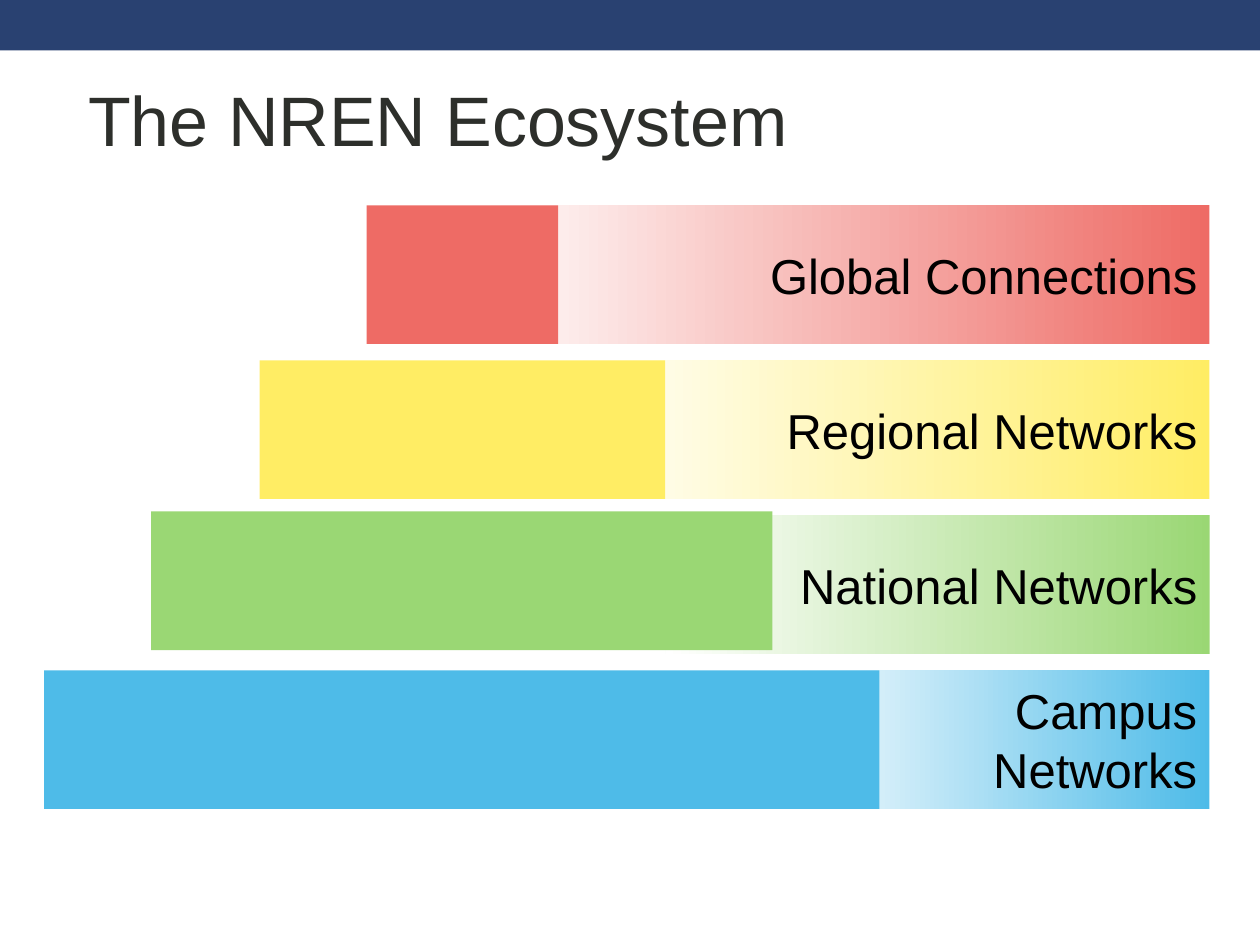
from dataclasses import dataclass

from pptx import Presentation
from pptx.dml.color import RGBColor
from pptx.enum.shapes import MSO_SHAPE as Shape
from pptx.enum.text import MSO_ANCHOR as Anchor, PP_ALIGN as Align
from pptx.util import Inches, Pt

NAVY = RGBColor(0x29, 0x41, 0x71)
CHARCOAL = RGBColor(0x2D, 0x2F, 0x2B)
BLACK = RGBColor(0x00, 0x00, 0x00)
WHITE = RGBColor(0xFF, 0xFF, 0xFF)
RED = RGBColor(0xEE, 0x6B, 0x65)
YELLOW = RGBColor(0xFF, 0xED, 0x64)
GREEN = RGBColor(0x9A, 0xD7, 0x74)
BLUE = RGBColor(0x4E, 0xBB, 0xE8)

TIER_TOP, TIER_PITCH, TIER_HEIGHT = 1.63, 1.23, 1.1
TIER_RIGHT = 9.6


@dataclass
class Tier:
    lines: tuple[str, ...]
    color: RGBColor
    block_left: float
    block_width: float
    label_left: float
    block_shift: float = 0


TIERS = [
    Tier(("Global Connections",), RED, 2.91, 1.52, 3.67),
    Tier(("Regional Networks",), YELLOW, 2.06, 3.22, 4.43),
    Tier(("National Networks",), GREEN, 1.2, 4.93, 5.28, -0.03),
    Tier(("Campus", "Networks"), BLUE, 0.35, 6.63, 6.13),
]


def add_rect(s, left: float, top: float, width: float, height: float):
    sp = s.shapes.add_shape(Shape.RECTANGLE, Inches(left), Inches(top),
                            Inches(width), Inches(height))
    sp.shadow.inherit = False
    sp.line.fill.background()
    return sp


def add_block(s, left: float, top: float, width: float, height: float,
              color: RGBColor) -> None:
    sp = add_rect(s, left, top, width, height)
    sp.fill.solid()
    sp.fill.fore_color.rgb = color


def write_lines(tf, lines: tuple[str, ...], size: float, color: RGBColor,
                align: Align) -> None:
    tf.word_wrap = True
    tf.vertical_anchor = Anchor.MIDDLE
    for i, line in enumerate(lines):
        p = tf.add_paragraph() if i else tf.paragraphs[0]
        p.alignment = align
        r = p.add_run()
        r.text = line
        for name, value in {"name": "Arial", "size": Pt(size)}.items():
            setattr(r.font, name, value)
        r.font.color.rgb = color


def add_label(s, tier: Tier, top: float) -> None:
    sp = add_rect(s, tier.label_left, top, TIER_RIGHT - tier.label_left, TIER_HEIGHT)
    sp.fill.gradient()
    sp.fill.gradient_angle = 180
    for stop, position, color in zip(sp.fill.gradient_stops, (0, 1), (tier.color, WHITE)):
        stop.position = position
        stop.color.rgb = color
    write_lines(sp.text_frame, tier.lines, 28, BLACK, Align.RIGHT)


def add_title(s, text: str) -> None:
    title = s.shapes.title
    place = {"left": 0.6, "top": 0.4, "width": 9, "height": 1.08}
    for name, value in place.items():
        setattr(title, name, Inches(value))
    write_lines(title.text_frame, (text,), 40, CHARCOAL, Align.LEFT)


def main() -> None:
    prs = Presentation()
    prs.slide_width, prs.slide_height = Inches(10), Inches(7.5)
    s = prs.slides.add_slide(prs.slide_layouts[5])
    add_block(s, 0, 0, 10, 0.4, NAVY)
    add_title(s, "The NREN Ecosystem")
    for i, tier in enumerate(TIERS):
        top = TIER_TOP + i * TIER_PITCH
        add_label(s, tier, top)
        add_block(s, tier.block_left, top + tier.block_shift, tier.block_width,
                  TIER_HEIGHT, tier.color)
    prs.save("out.pptx")


if __name__ == "__main__":
    main()
